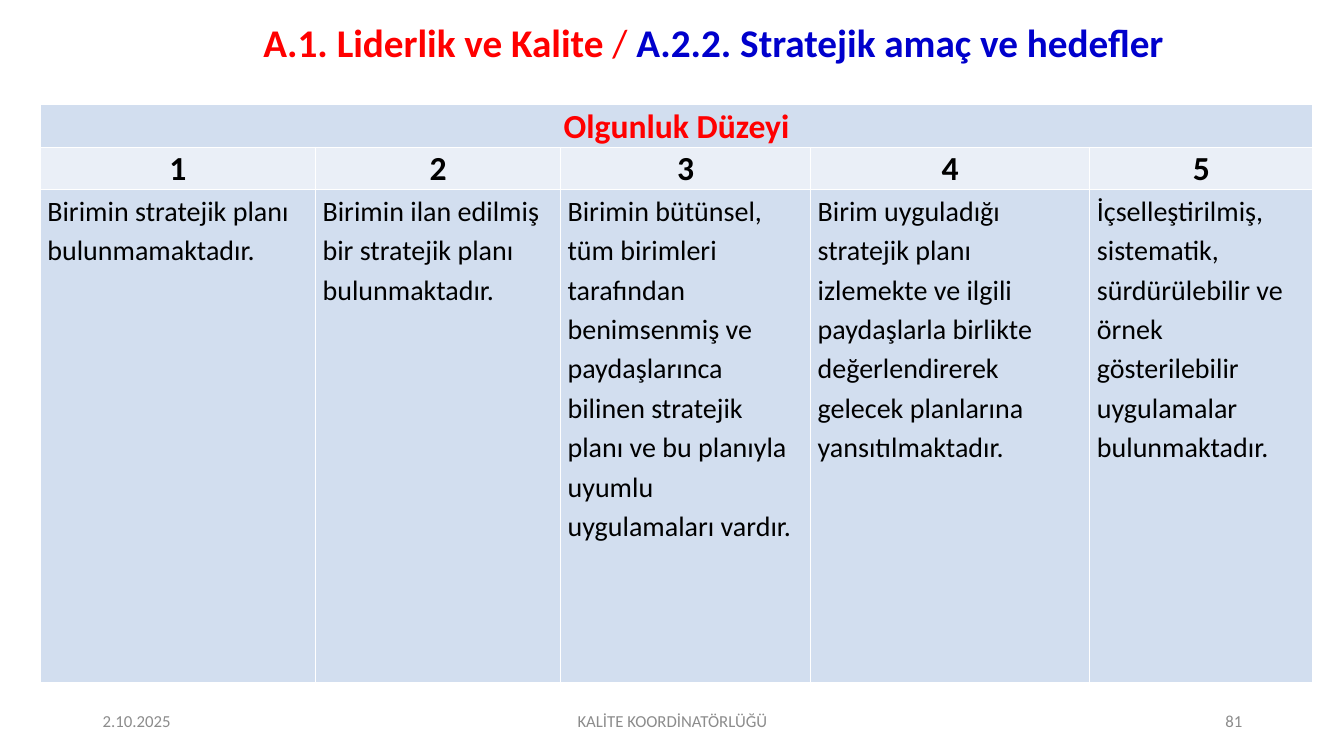
from lxml import etree
from pptx import Presentation
from pptx.dml.color import RGBColor
from pptx.enum.text import MSO_ANCHOR, PP_ALIGN
from pptx.oxml.ns import qn
from pptx.util import Emu, Pt

PX = 9144
FONT = "Calibri"
LEFT, CENTER, RIGHT = PP_ALIGN.LEFT, PP_ALIGN.CENTER, PP_ALIGN.RIGHT
TOP, MIDDLE, BOTTOM = MSO_ANCHOR.TOP, MSO_ANCHOR.MIDDLE, MSO_ANCHOR.BOTTOM
COLORS = {
    "red": "FF0000",
    "blue": "0000CC",
    "black": "000000",
    "gray": "8C8C8C",
    "white": "FFFFFF",
    "band": "D2DEEF",
    "light_band": "EAEFF7",
}
COLUMN_WIDTHS = [273, 243, 248, 277, 221]
ROW_HEIGHTS = [42, 42, 489]
LEVELS = [
    "Birimin stratejik planı bulunmamaktadır.",
    "Birimin ilan edilmiş bir stratejik planı bulunmaktadır.",
    "Birimin bütünsel, tüm birimleri tarafından benimsenmiş ve paydaşlarınca "
    "bilinen stratejik planı ve bu planıyla uyumlu uygulamaları vardır.",
    "Birim uyguladığı stratejik planı izlemekte ve ilgili paydaşlarla birlikte "
    "değerlendirerek gelecek planlarına yansıtılmaktadır.",
    "İçselleştirilmiş, sistematik, sürdürülebilir ve örnek gösterilebilir "
    "uygulamalar bulunmaktadır.",
]


def px(length):
    return Emu(length * PX)


def rgb(name):
    return RGBColor.from_string(COLORS[name])


def style_run(run, size, color, bold=False):
    run.font.name = FONT
    run.font.size = Pt(size)
    run.font.bold = bold
    run.font.color.rgb = rgb(color)


def add_text(slide, box, pieces, size, align):
    text_frame = slide.shapes.add_textbox(*map(px, box)).text_frame
    text_frame.word_wrap = True
    text_frame.vertical_anchor = MIDDLE
    paragraph = text_frame.paragraphs[0]
    paragraph.alignment = align
    for text, color, bold in pieces:
        run = paragraph.add_run()
        run.text = text
        style_run(run, size, color, bold)
    return paragraph


def add_title(slide, box):
    pieces = [
        ("A.1. Liderlik ve Kalite ", "red", True),
        ("/ ", "red", False),
        ("A.2.2. Stratejik amaç ve hedefler", "blue", True),
    ]
    add_text(slide, box, pieces, 28, CENTER).line_spacing = 0.9


def add_borders(cell):
    properties = cell._tc.get_or_add_tcPr()
    for side in ("lnL", "lnR", "lnT", "lnB"):
        line = etree.SubElement(properties, qn(f"a:{side}"), w=str(Pt(1)))
        fill = etree.SubElement(line, qn("a:solidFill"))
        etree.SubElement(fill, qn("a:srgbClr"), val=COLORS["white"])


def format_cell(cell, fill):
    add_borders(cell)
    cell.fill.solid()
    cell.fill.fore_color.rgb = rgb(fill)
    cell.margin_left = cell.margin_right = px(7)
    cell.margin_top = cell.margin_bottom = 0


def write_cell(cell, text, size, color, bold, align, anchor):
    cell.text_frame.text = text
    cell.vertical_anchor = anchor
    paragraph = cell.text_frame.paragraphs[0]
    paragraph.alignment = align
    style_run(paragraph.runs[0], size, color, bold)
    return paragraph


def add_maturity_table(slide, box):
    frame = slide.shapes.add_table(len(ROW_HEIGHTS), len(COLUMN_WIDTHS), *map(px, box))
    table = frame.table
    for column, width in zip(table.columns, COLUMN_WIDTHS):
        column.width = px(width)
    for row, height, fill in zip(table.rows, ROW_HEIGHTS, ("band", "light_band", "band")):
        row.height = px(height)
        for cell in row.cells:
            format_cell(cell, fill)

    table.cell(0, 0).merge(table.cell(0, len(COLUMN_WIDTHS) - 1))
    write_cell(table.cell(0, 0), "Olgunluk Düzeyi", 24, "red", True, CENTER, BOTTOM)
    for index, description in enumerate(LEVELS):
        number = write_cell(table.cell(1, index), str(index + 1), 24, "black", True, CENTER, BOTTOM)
        number.space_after = Pt(4)
        body = write_cell(table.cell(2, index), description, 20, "black", False, LEFT, TOP)
        body.line_spacing = 1.15


def add_footer(slide, box):
    left, top, width, height = box
    side, middle = 300, 450
    parts = [
        ("2.10.2025", left, side, LEFT),
        ("KALİTE KOORDİNATÖRLÜĞÜ", left + (width - middle) // 2, middle, CENTER),
        ("81", left + width - side, side, RIGHT),
    ]
    for text, part_left, part_width, align in parts:
        add_text(slide, (part_left, top, part_width, height), [(text, "gray", False)], 12, align)


def main():
    presentation = Presentation()
    presentation.slide_width = px(1333)
    presentation.slide_height = px(750)
    slide = presentation.slides.add_slide(presentation.slide_layouts[6])
    add_title(slide, (82, 13, 1251, 62))
    add_maturity_table(slide, (40, 104, sum(COLUMN_WIDTHS), sum(ROW_HEIGHTS)))
    add_footer(slide, (92, 695, 1150, 40))
    presentation.save("out.pptx")


if __name__ == "__main__":
    main()
